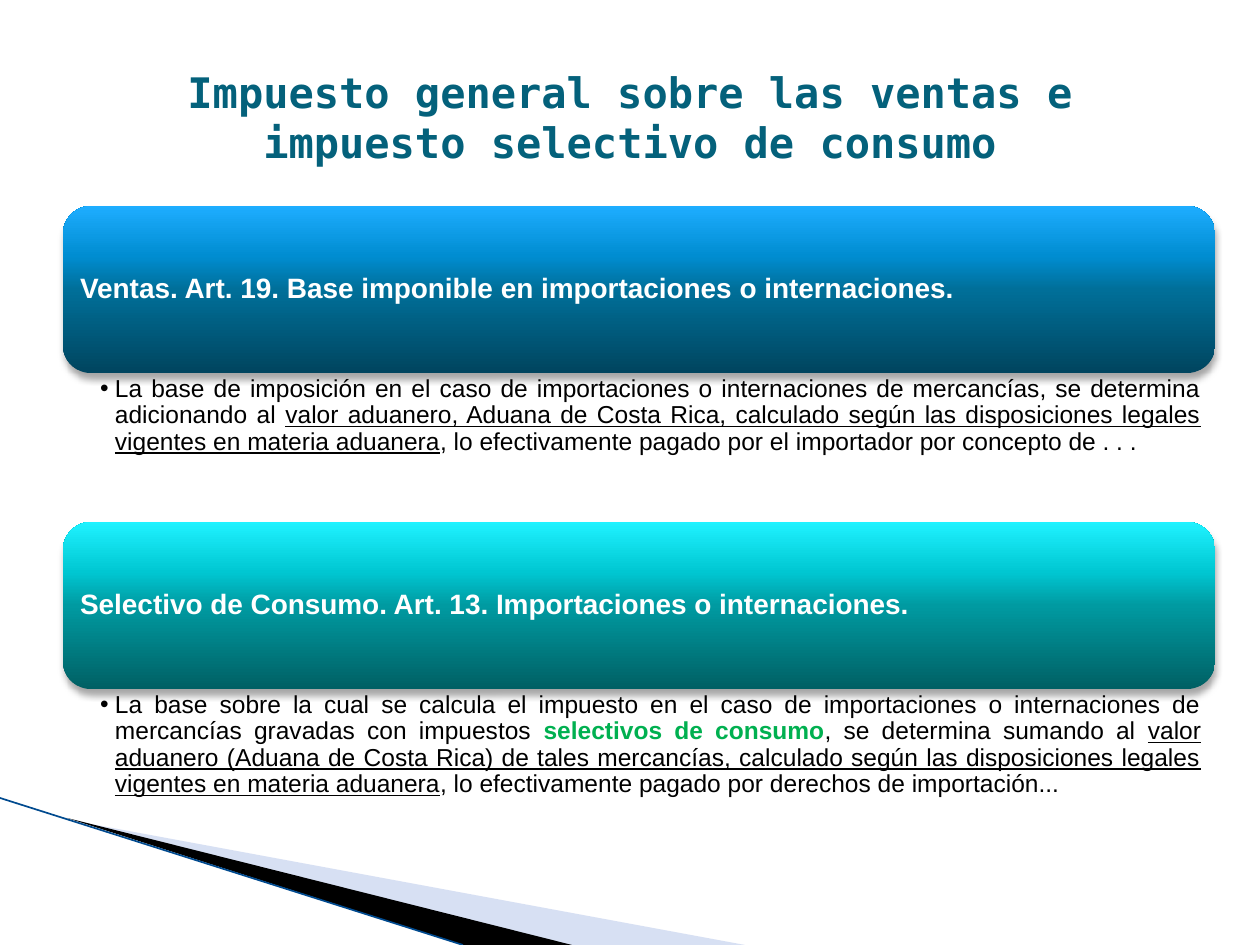
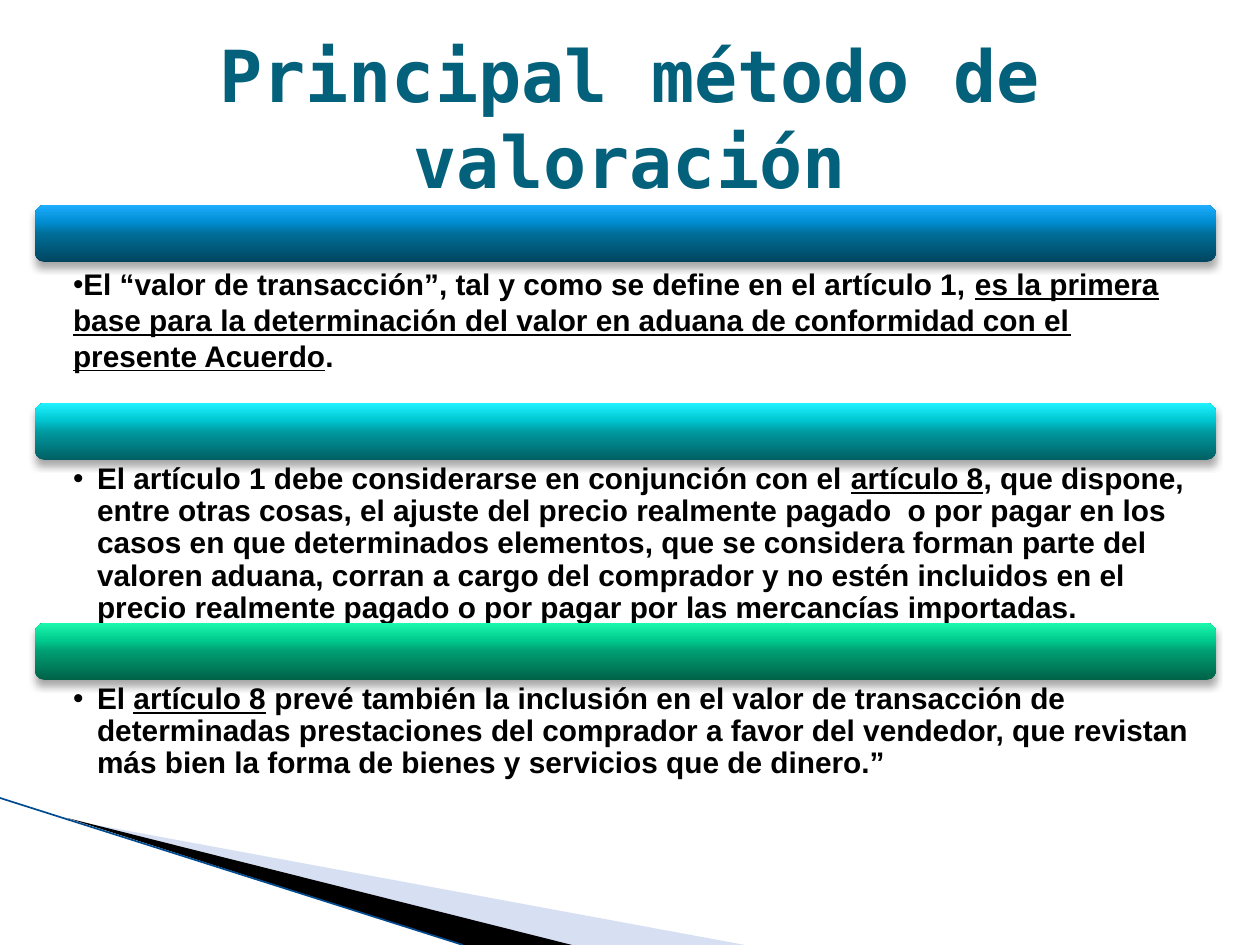
import pptx
import pptx.util
import pptx.oxml
import pptx.oxml.ns
import pptx.dml.color
import pptx.enum.text
import pptx.enum.shapes

UNIT = 914400 / 126
WIDE, HIGH = 1260, 945
BODY, MONO = "Arial", "DejaVu Sans Mono"
ALIGN = pptx.enum.text.PP_ALIGN
ANCHOR = pptx.enum.text.MSO_ANCHOR
COLORS = {
    "title": "04617B",
    "text": "000000",
    "light": "FFFFFF",
    "accent": "00B050",
    "wedge": "000000",
    "pale": "9DB2E1",
    "edge": "004A8F",
    "shade": "000000",
}
FADES = {
    "blue": ["00455F", "006F99", "008DD1", "1EADFF"],
    "cyan": ["006064", "009AA1", "00C7D2", "1FF2FF"],
    "green": ["006247", "009E73", "00CB8E", "1CF9AE"],
}
STOPS = [0, 50, 70, 100]


def px(*nums):
    return [round(num * UNIT) for num in nums]


def tint(name):
    return pptx.dml.color.RGBColor.from_string(COLORS[name])


def node(tag, body="", **attrs):
    pairs = "".join(f' {key}="{val}"' for key, val in attrs.items())
    space = pptx.oxml.ns.nsdecls("a")
    return pptx.oxml.parse_xml(f"<a:{tag} {space}{pairs}>{body}</a:{tag}>")


def style(run, size, color, bold, face=BODY):
    font = run.font
    font.name, font.size, font.bold = face, pptx.util.Pt(size), bold
    font.color.rgb = tint(color)


def setup(frame, insets, anchor):
    frame.word_wrap = True
    frame.auto_size = pptx.enum.text.MSO_AUTO_SIZE.NONE
    frame.vertical_anchor = anchor
    (frame.margin_left, frame.margin_top,
     frame.margin_right, frame.margin_bottom) = px(*insets)


def wedge(slide, points, color, alpha=100):
    form = slide.shapes.build_freeform(*points[0], scale=UNIT)
    form.add_line_segments(points[1:])
    shape = form.convert_to_shape()
    shape.shadow.inherit = False
    shape.fill.solid()
    shape.fill.fore_color.rgb = tint(color)
    shape.line.fill.background()
    if alpha < 100:
        shade = shape.fill._xPr.find(".//" + pptx.oxml.ns.qn("a:srgbClr"))
        shade.append(node("alpha", val=alpha * 1000))


def corner(slide):
    wedge(slide, [(69, 820), (745, HIGH), (570, HIGH)], "pale", 40)
    wedge(slide, [(67, 818), (572, HIGH), (463, HIGH)], "wedge")
    edge = slide.shapes.add_connector(
        pptx.enum.shapes.MSO_CONNECTOR.STRAIGHT, *px(0, 798, 463, HIGH))
    edge.line.color.rgb = tint("edge")
    edge.line.width = pptx.util.Pt(0.95)
    edge._element.spPr.append(node("effectLst"))


def title(slide, text, size):
    box = slide.shapes.add_textbox(*px(63, 38, 1134, 157))
    frame = box.text_frame
    setup(frame, (13, 6, 13, 6), ANCHOR.MIDDLE)
    frame.text = text
    para = frame.paragraphs[0]
    para.alignment = ALIGN.CENTER
    style(para.runs[0], size, "title", True, MONO)


def bar(slide, place, fade, text=""):
    shape = slide.shapes.add_shape(
        pptx.enum.shapes.MSO_SHAPE.ROUNDED_RECTANGLE, *px(*place))
    shape.line.fill.background()
    shape.shadow.inherit = False
    props = shape._element.spPr
    stops = "".join(
        f'<a:gs pos="{pos * 1000}"><a:srgbClr val="{color}"/></a:gs>'
        for pos, color in zip(STOPS, FADES[fade]))
    line = props.find(pptx.oxml.ns.qn("a:ln"))
    line.addprevious(node(
        "gradFill",
        f'<a:gsLst>{stops}</a:gsLst><a:lin ang="16200000" scaled="0"/>',
        rotWithShape=1))
    glow = props.find(pptx.oxml.ns.qn("a:effectLst"))
    glow.append(node(
        "outerShdw",
        f'<a:srgbClr val="{COLORS["shade"]}"><a:alpha val="35000"/></a:srgbClr>',
        blurRad=pptx.util.Pt(4), dist=pptx.util.Pt(3), dir=5400000,
        algn="ctr", rotWithShape=0))
    if text:
        frame = shape.text_frame
        setup(frame, (9, 9, 9, 9), ANCHOR.MIDDLE)
        frame.text = text
        para = frame.paragraphs[0]
        para.alignment, para.line_spacing = ALIGN.JUSTIFY, 0.9
        style(para.runs[0], 16, "light", True)


def bullet(slide, place, parts, insets, size, bold, hang, align):
    box = slide.shapes.add_textbox(*px(*place))
    frame = box.text_frame
    setup(frame, insets, ANCHOR.TOP)
    para = frame.paragraphs[0]
    props = para._p.get_or_add_pPr()
    indent = px(hang)[0]
    props.set("marL", str(indent))
    props.set("indent", str(-indent))
    props.append(node("buFont", typeface=BODY))
    props.append(node("buChar", char="•"))
    para.alignment = align
    para.line_spacing = 0.9 if hang else 1.0
    for text, mark in parts:
        run = para.add_run()
        run.text = text
        key = mark == "key"
        style(run, size, "accent" if key else "text", bold or key)
        run.font.underline = mark == "under"


def taxes(slide):
    title(slide, "Impuesto general sobre las ventas e impuesto selectivo de consumo", 24)
    rows = [
        ("blue", "Ventas. Art. 19. Base imponible en importaciones o internaciones.", [
            ("La base de imposición en el caso de importaciones o internaciones "
             "de mercancías, se determina adicionando al ", ""),
            ("valor aduanero, Aduana de Costa Rica, calculado según las "
             "disposiciones legales vigentes en materia aduanera", "under"),
            (", lo efectivamente pagado por el importador por concepto de . . .", "")]),
        ("cyan", "Selectivo de Consumo. Art. 13. Importaciones o internaciones.", [
            ("La base sobre la cual se calcula el impuesto en el caso de "
             "importaciones o internaciones de mercancías gravadas con impuestos ", ""),
            ("selectivos de consumo", "key"),
            (", se determina sumando al ", ""),
            ("valor aduanero (Aduana de Costa Rica) de tales mercancías, calculado "
             "según las disposiciones legales vigentes en materia aduanera", "under"),
            (", lo efectivamente pagado por derechos de importación...", "")]),
    ]
    left, top, width, thick, deep = 63, 206, 1152, 167, 149
    for fade, head, parts in rows:
        bar(slide, (left, top, width, thick), fade, head)
        bullet(slide, (left, top + thick, width, deep), parts,
               (37, 3, 14, 3), 14, False, 15, ALIGN.JUSTIFY)
        top += thick + deep


def method(slide):
    title(slide, "Principal método de valoración", 41)
    rows = [
        ("blue", 141, 0, [
            ("El “valor de transacción”, tal y como se define en el artículo 1, ", ""),
            ("es la primera base para la determinación del valor en aduana de "
             "conformidad con el presente Acuerdo", "under"),
            (".", "")]),
        ("cyan", 163, 24, [
            ("El artículo 1 debe considerarse en conjunción con el ", ""),
            ("artículo 8", "under"),
            (", que dispone, entre otras cosas, el ajuste del precio realmente "
             "pagado  o por pagar en los casos en que determinados elementos, que "
             "se considera forman parte del valoren aduana, corran a cargo del "
             "comprador y no estén incluidos en el precio realmente pagado o por "
             "pagar por las mercancías importadas.", "")]),
        ("green", 101, 24, [
            ("El ", ""),
            ("artículo 8", "under"),
            (" prevé también la inclusión en el valor de transacción de "
             "determinadas prestaciones del comprador a favor del vendedor, que "
             "revistan más bien la forma de bienes y servicios que de dinero.”", "")]),
    ]
    left, top, width, thick = 35, 205, 1181, 57
    for fade, deep, hang, parts in rows:
        bar(slide, (left, top, width, thick), fade)
        bullet(slide, (left, top + thick, width, deep), parts,
               (38, 4, 21, 4), 17, True, hang, ALIGN.LEFT)
        top += thick + deep


def main():
    deck = pptx.Presentation()
    deck.slide_width, deck.slide_height = px(WIDE, HIGH)
    for build in (taxes, method):
        slide = deck.slides.add_slide(deck.slide_layouts[6])
        corner(slide)
        build(slide)
    deck.save("out.pptx")


if __name__ == "__main__":
    main()
